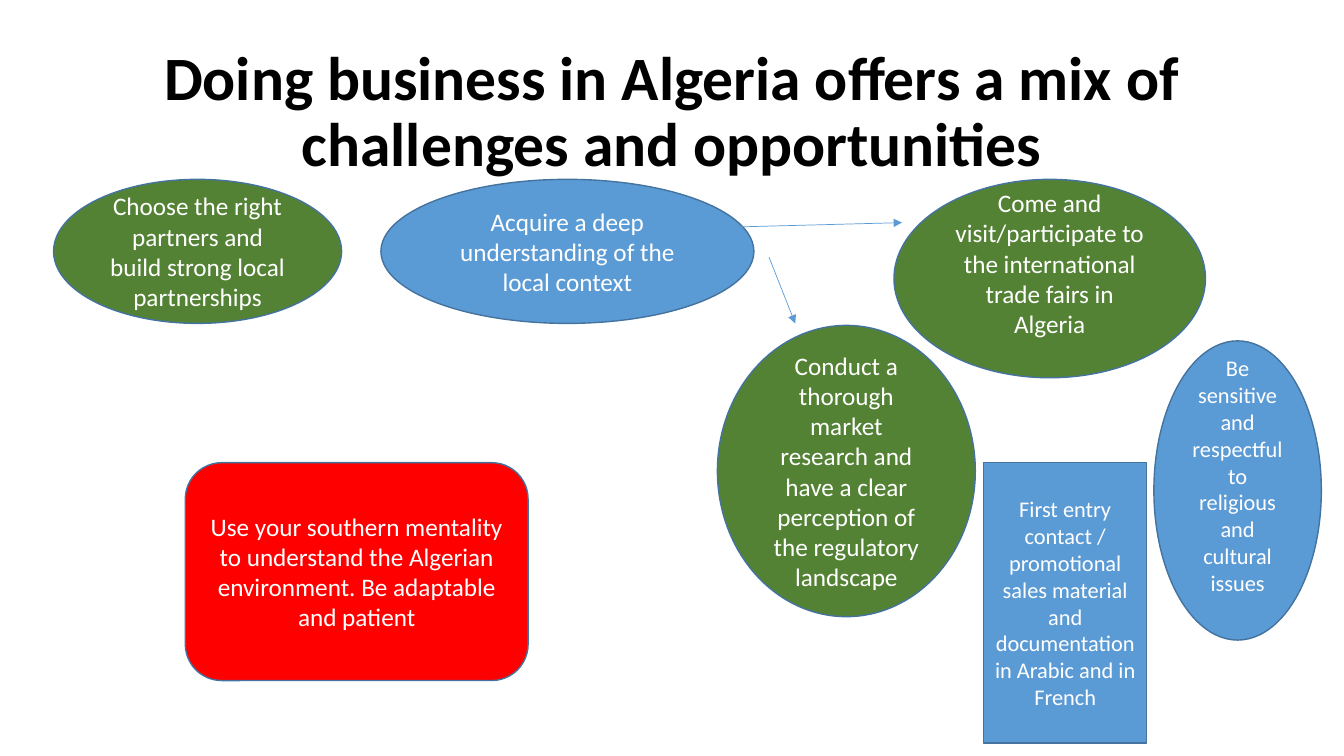
from dataclasses import dataclass

from lxml import etree
from pptx import Presentation
from pptx.dml.color import RGBColor
from pptx.enum.shapes import MSO_CONNECTOR, MSO_SHAPE
from pptx.enum.text import MSO_ANCHOR, PP_ALIGN
from pptx.oxml.ns import qn
from pptx.util import Cm, Pt


@dataclass(frozen=True)
class Theme:
    font: str = "Calibri"
    black: RGBColor = RGBColor.from_string("000000")
    white: RGBColor = RGBColor.from_string("FFFFFF")
    green: RGBColor = RGBColor.from_string("548235")
    blue: RGBColor = RGBColor.from_string("5B9BD5")
    red: RGBColor = RGBColor.from_string("FF0000")
    outline: RGBColor = RGBColor.from_string("43739E")
    title_size: Pt = Pt(44)
    body_size: Pt = Pt(18)
    small_size: Pt = Pt(16)


theme = Theme()


def write_centred(shape, text, size, color, bold=False):
    frame = shape.text_frame
    frame.word_wrap = True
    frame.vertical_anchor = MSO_ANCHOR.MIDDLE
    frame.text = text
    paragraph = frame.paragraphs[0]
    paragraph.alignment = PP_ALIGN.CENTER
    font = paragraph.runs[0].font
    font.name, font.size, font.bold = theme.font, size, bold
    font.color.rgb = color
    return paragraph


prs = Presentation()
prs.slide_width, prs.slide_height = Cm(33.87), Cm(19.05)
slide = prs.slides.add_slide(prs.slide_layouts[6])

# Title
title = slide.shapes.add_textbox(Cm(2.34), Cm(1.02), Cm(29.21), Cm(3.68))
headline = write_centred(
    title, "Doing business in Algeria offers a mix of challenges and opportunities",
    theme.title_size, theme.black, bold=True)
headline.line_spacing = 0.9

# Advice: outline, left, top, width, height, fill, type size, bottom inset, text
top_row, lower_row = 4.52, 11.66
inset, raised_inset = 0.13, 0.9
advice = [
    (MSO_SHAPE.OVAL, 1.35, top_row, 7.26, 3.63, theme.green, theme.body_size, inset,
     "Choose the right partners and build strong local partnerships"),
    (MSO_SHAPE.OVAL, 9.6, top_row, 9.4, 3.63, theme.blue, theme.body_size, inset,
     "Acquire a deep understanding of the local context"),
    (MSO_SHAPE.OVAL, 22.53, top_row, 7.85, 5, theme.green, theme.body_size, raised_inset,
     "Come and visit/participate to the international trade fairs in Algeria"),
    (MSO_SHAPE.ROUNDED_RECTANGLE, 4.67, lower_row, 8.64, 5.49, theme.red, theme.body_size, inset,
     "Use your southern mentality to understand the Algerian environment. "
     "Be adaptable and patient"),
    (MSO_SHAPE.OVAL, 18.08, 8.2, 6.5, 7.34, theme.green, theme.body_size, inset,
     "Conduct a thorough market research and have a clear perception "
     "of the regulatory landscape"),
    (MSO_SHAPE.OVAL, 29.08, 8.59, 4.22, 7.54, theme.blue, theme.small_size, raised_inset,
     "Be sensitive and respectful to religious and cultural issues"),
    (MSO_SHAPE.RECTANGLE, 24.79, lower_row, 4.11, 7.06, theme.blue, theme.small_size, inset,
     "First entry contact / promotional sales material and documentation "
     "in Arabic and in French"),
]
for outline, left, top, width, height, fill, size, bottom_inset, text in advice:
    bubble = slide.shapes.add_shape(outline, Cm(left), Cm(top), Cm(width), Cm(height))
    bubble.shadow.inherit = False
    bubble.fill.solid()
    bubble.fill.fore_color.rgb = fill
    bubble.line.color.rgb = theme.outline
    bubble.line.width = Pt(1)
    bubble.text_frame.margin_bottom = Cm(bottom_inset)
    write_centred(bubble, text, size, theme.white)

# Arrows from the local context to the trade fairs and the market research
for ends in [(18.52, 5.72, 22.73, 5.61), (19.38, 6.48, 20.04, 8.15)]:
    arrow = slide.shapes.add_connector(MSO_CONNECTOR.STRAIGHT, *map(Cm, ends))
    arrow.line.color.rgb = theme.blue
    arrow.line.width = Pt(0.5)
    etree.SubElement(arrow.line._get_or_add_ln(), qn("a:tailEnd"), type="triangle")
    etree.SubElement(arrow._element.spPr, qn("a:effectLst"))

prs.save("out.pptx")
